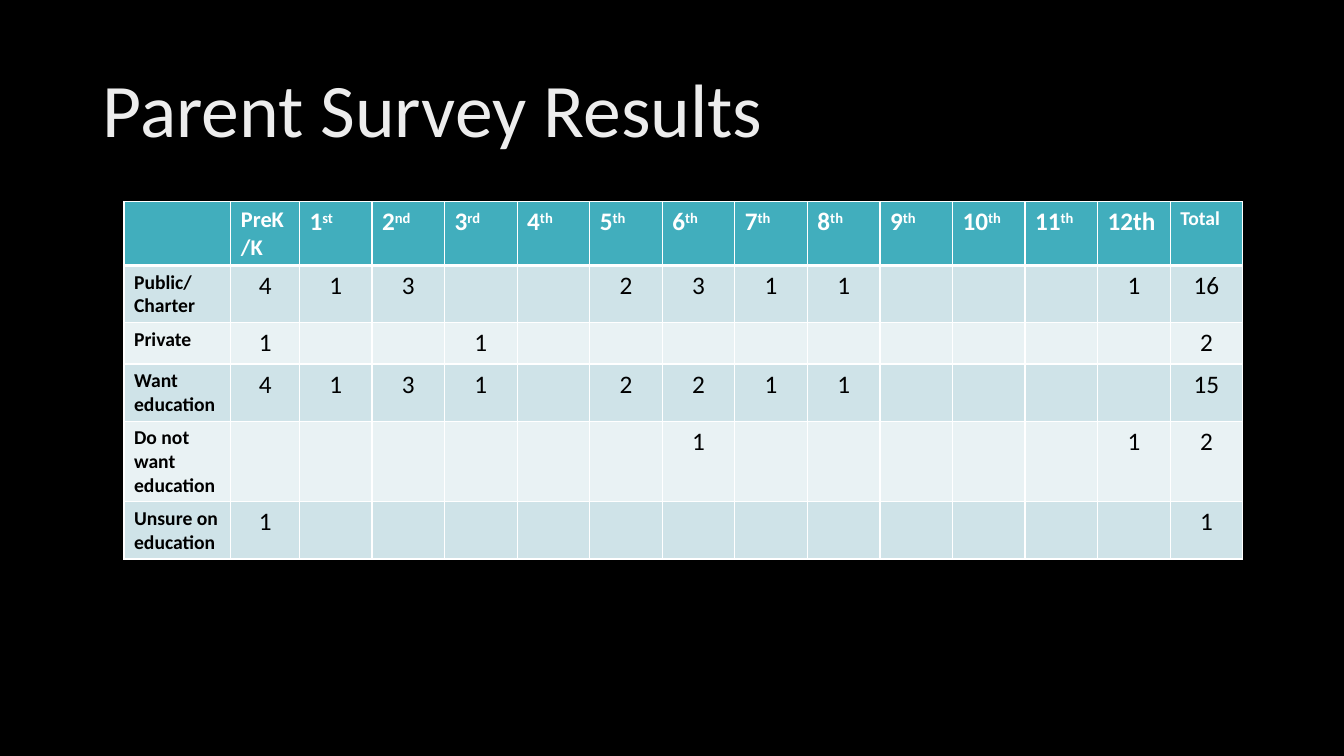
"""Build the Parent Survey Results slide with its table of answers by grade."""
from lxml.etree import SubElement
from pptx import Presentation
from pptx.dml.color import RGBColor
from pptx.enum.text import MSO_ANCHOR as Anchor, PP_ALIGN as Align
from pptx.oxml.ns import qn
from pptx.util import Inches, Pt

TITLE = "Parent Survey Results"
GRADES = ["", "PreK/K", "1^st", "2^nd", "3^rd", "4^th", "5^th", "6^th", "7^th",
          "8^th", "9^th", "10^th", "11^th", "12th", "Total"]
GRADE_SIZES = {"PreK/K": 16, "Total": 14}
ANSWERS = [
    ("Public/ Charter", {"PreK/K": 4, "1^st": 1, "2^nd": 3, "5^th": 2, "6^th": 3,
                         "7^th": 1, "8^th": 1, "12th": 1, "Total": 16}),
    ("Private", {"PreK/K": 1, "3^rd": 1, "Total": 2}),
    ("Want education", {"PreK/K": 4, "1^st": 1, "2^nd": 3, "3^rd": 1, "5^th": 2,
                        "6^th": 2, "7^th": 1, "8^th": 1, "Total": 15}),
    ("Do not want education", {"6^th": 1, "12th": 1, "Total": 2}),
    ("Unsure on education", {"PreK/K": 1, "Total": 1}),
]
COLUMN_WIDTHS = [1.06, 0.68] + [0.72] * 13
ROW_HEIGHT = 0.41

BLACK = RGBColor(0x00, 0x00, 0x00)
WHITE = RGBColor(0xFF, 0xFF, 0xFF)
PALE_GREY = RGBColor(0xED, 0xED, 0xED)
TEAL = RGBColor(0x41, 0xAE, 0xBD)
BANDS = [RGBColor(0xCF, 0xE3, 0xE8), RGBColor(0xE9, 0xF2, 0xF4)]


def write(frame, text, size=18, color=BLACK, bold=False, align=Align.LEFT, spacing=1.0):
    """Fill a text frame; what follows a caret is set as superscript."""
    paragraph = frame.paragraphs[0]
    paragraph.alignment = align
    paragraph.line_spacing = spacing
    for position, part in enumerate(text.split("^")):
        run = paragraph.add_run()
        run.text = part
        run.font.name = "Calibri"
        run.font.size = Pt(size)
        run.font.bold = bold
        run.font.color.rgb = color
        if position:
            run.font._element.set("baseline", "30000")


def paint(cell, color, top=1, bottom=1):
    """Give a cell its fill and its white borders."""
    cell.fill.solid()
    cell.fill.fore_color.rgb = color
    properties = cell._tc.get_or_add_tcPr()
    sides = [("a:lnL", 1), ("a:lnR", 1), ("a:lnT", top), ("a:lnB", bottom)]
    for position, (side, width) in enumerate(sides):
        line = SubElement(properties, qn(side), w=str(Pt(width)))
        SubElement(SubElement(line, qn("a:solidFill")), qn("a:srgbClr"), val=str(WHITE))
        properties.insert(position, line)


def main():
    """Lay out the title and the table, then save."""
    deck = Presentation()
    deck.slide_width, deck.slide_height = Inches(13.33), Inches(7.5)
    slide = deck.slides.add_slide(deck.slide_layouts[6])
    slide.background.fill.solid()
    slide.background.fill.fore_color.rgb = BLACK

    title = slide.shapes.add_textbox(
        Inches(0.92), Inches(0.4), Inches(11.5), Inches(1.45)).text_frame
    title.word_wrap = True
    title.vertical_anchor = Anchor.MIDDLE
    write(title, TITLE, size=54, color=PALE_GREY, spacing=0.9)

    row_count = len(ANSWERS) + 1
    survey = slide.shapes.add_table(
        row_count, len(GRADES), Inches(1.23), Inches(2),
        Inches(sum(COLUMN_WIDTHS)), Inches(ROW_HEIGHT * row_count)).table
    for column, width in zip(survey.columns, COLUMN_WIDTHS):
        column.width = Inches(width)

    for column, grade in enumerate(GRADES):
        heading = survey.cell(0, column)
        paint(heading, TEAL, bottom=3)
        if grade:
            write(heading.text_frame, grade, size=GRADE_SIZES.get(grade, 18),
                  color=WHITE, bold=True)

    for row, (answer, counts) in enumerate(ANSWERS, start=1):
        for column, grade in enumerate(GRADES):
            cell = survey.cell(row, column)
            paint(cell, BANDS[(row - 1) % 2], top=3 if row == 1 else 1)
            if column == 0:
                write(cell.text_frame, answer, size=14, bold=True)
            elif grade in counts:
                write(cell.text_frame, str(counts[grade]), align=Align.CENTER)

    deck.save("out.pptx")


if __name__ == "__main__":
    main()
